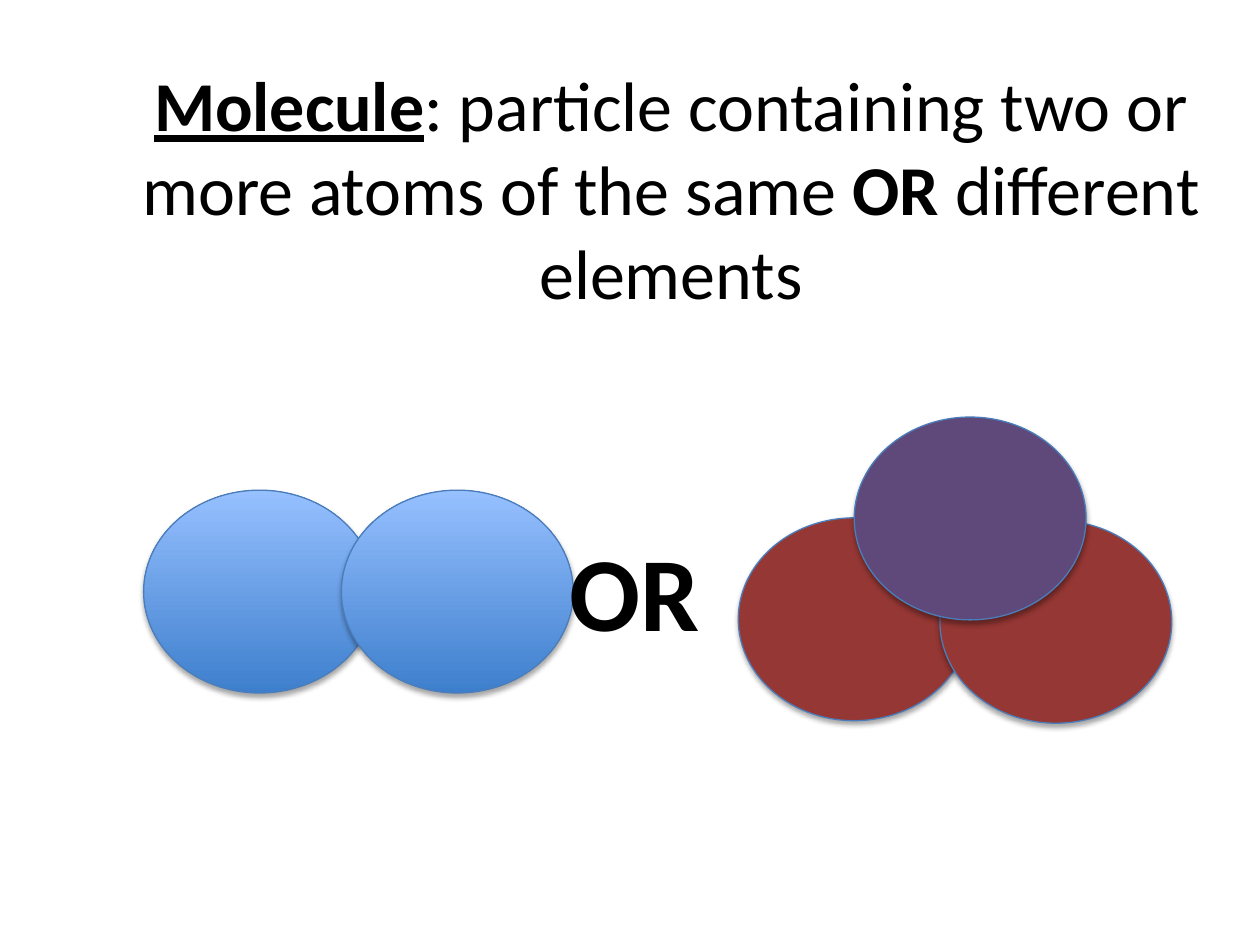
from lxml import etree
from pptx import Presentation, util as u
from pptx.dml.color import RGBColor
from pptx.enum import shapes, text
from pptx.oxml.ns import qn

WIDTH, HEIGHT = 10, 7.5
BLUE, RED, PURPLE = ("3E7FCD", "96C0FF"), ("953734",), ("5F497A",)
OUTLINE, INK = "4A7DBA", "000000"
ATOM_SIZE = (0.184, 0.215)

DEFINITION = [
    ("Molecule", {"bold": True, "underline": True}),
    (": particle containing two or more atoms of the same ", {}),
    ("OR", {"bold": True}),
    (" different elements", {}),
]
CONJUNCTION = [("OR ", {"bold": True})]
DEFINITION_AREA = (0.079, 0.059, 0.907, 0.28)
CONJUNCTION_AREA = (0.428, 0.551, 0.17, 0.148)
MOLECULES = [
    [(0.114, 0.519, BLUE), (0.271, 0.519, BLUE)],
    [(0.586, 0.548, RED), (0.746, 0.551, RED), (0.678, 0.441, PURPLE)],
]
SHADOW = {"blurRad": u.Pt(3.1), "dist": u.Pt(1.8), "dir": 90 * 60000, "rotWithShape": 0}


def color(value):
    return RGBColor.from_string(value)


def area(left, top, width, height):
    return [u.Inches(round(share * side, 2)) for share, side in
            zip((left, top, width, height), (WIDTH, HEIGHT) * 2)]


def write(holder, runs, size, anchor):
    frame = holder.text_frame
    for key, value in {"word_wrap": True, "vertical_anchor": anchor,
                       "auto_size": text.MSO_AUTO_SIZE.NONE}.items():
        setattr(frame, key, value)
    paragraph = frame.paragraphs[0]
    paragraph.alignment = text.PP_ALIGN.CENTER
    for words, style in runs:
        run = paragraph.add_run()
        run.text = words
        run.font.color.rgb = color(INK)
        for key, value in {"name": "Calibri", "size": u.Pt(size), **style}.items():
            setattr(run.font, key, value)


def cast_shadow(atom):
    atom.shadow.inherit = False
    effects = atom.element.spPr.find(qn("a:effectLst"))
    shadow = etree.SubElement(effects, qn("a:outerShdw"),
                              {key: str(value) for key, value in SHADOW.items()})
    tint = etree.SubElement(shadow, qn("a:srgbClr"), val=INK)
    etree.SubElement(tint, qn("a:alpha"), val="35000")


def add_atom(molecule, left, top, shades):
    atom = molecule.shapes.add_shape(shapes.MSO_SHAPE.OVAL, *area(left, top, *ATOM_SIZE))
    if len(shades) > 1:
        atom.fill.gradient()
        atom.fill.gradient_angle = 90
        for stop, shade in zip(atom.fill.gradient_stops, shades):
            stop.color.rgb = color(shade)
    else:
        atom.fill.solid()
        atom.fill.fore_color.rgb = color(shades[0])
    atom.line.color.rgb = color(OUTLINE)
    atom.line.width = u.Pt(0.75)
    cast_shadow(atom)


def main():
    deck = Presentation()
    deck.slide_width, deck.slide_height = u.Inches(WIDTH), u.Inches(HEIGHT)
    slide = deck.slides.add_slide(deck.slide_layouts[5])

    definition = slide.shapes.title
    for side, length in zip(("left", "top", "width", "height"), area(*DEFINITION_AREA)):
        setattr(definition, side, length)
    write(definition, DEFINITION, 40, text.MSO_ANCHOR.MIDDLE)

    same, different = MOLECULES
    for molecule, atoms in ((slide.shapes.add_group_shape(), same), (slide, different)):
        for atom in atoms:
            add_atom(molecule, *atom)

    conjunction = slide.shapes.add_textbox(*area(*CONJUNCTION_AREA))
    write(conjunction, CONJUNCTION, 60, text.MSO_ANCHOR.TOP)
    deck.save("out.pptx")


if __name__ == "__main__":
    main()
